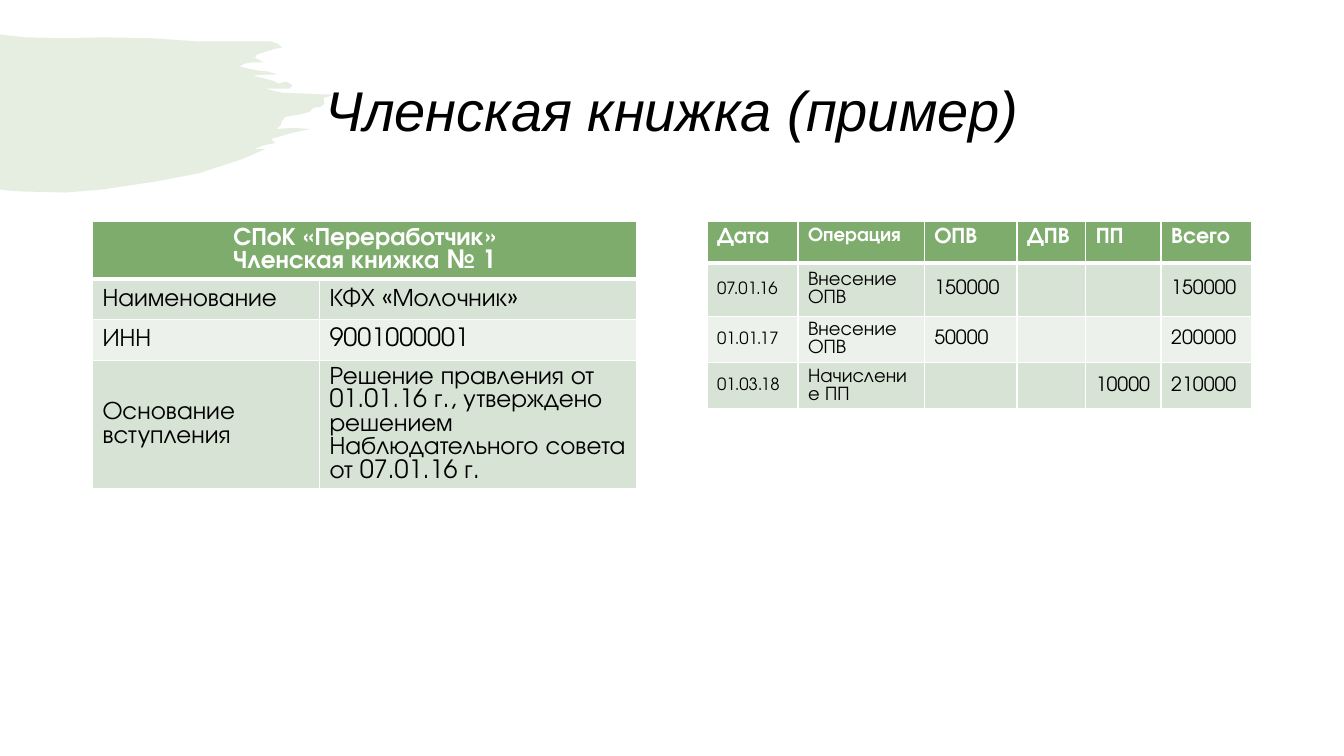
from lxml.etree import SubElement
from pptx import Presentation
from pptx.dml.color import RGBColor
from pptx.enum.text import MSO_ANCHOR as Anchor, PP_ALIGN as Align
from pptx.oxml.ns import qn
from pptx.util import Cm, Pt

GREEN = RGBColor(0x7D, 0xAC, 0x6C)
BAND_DARK = RGBColor(0xD7, 0xE3, 0xD4)
BAND_LIGHT = RGBColor(0xEC, 0xF1, 0xEB)
WHITE = RGBColor(0xFF, 0xFF, 0xFF)
BLACK = RGBColor(0, 0, 0)

BRUSH_UNIT = Cm(0.0254)
BRUSH_OUTLINE = [
    (0, 34), (6, 35), (25, 37), (66, 38), (102, 37), (151, 38), (194, 41), (248, 41),
    (268, 41), (275, 43), (280, 47), (271, 49), (255, 54), (253, 57), (256, 59), (262, 62),
    (250, 62), (243, 63), (238, 66), (246, 68), (256, 70), (266, 71), (275, 74), (263, 74),
    (251, 75), (263, 78), (273, 81), (276, 83), (280, 82), (284, 81), (288, 83), (290, 85),
    (287, 88), (284, 88), (263, 88), (280, 92), (330, 94), (326, 96), (321, 97), (322, 103),
    (318, 106), (311, 107), (307, 111), (300, 113), (283, 116), (280, 120), (278, 125),
    (274, 128), (291, 127), (308, 128), (289, 132), (269, 138), (273, 142), (262, 144),
    (252, 148), (263, 148), (240, 158), (197, 172), (155, 180), (102, 188), (65, 191),
    (23, 190), (7, 189), (0, 188),
]

MEMBER_ROWS = [
    ["СПоК «Переработчик»\nЧленская книжка № 1", ""],
    ["Наименование", "КФХ «Молочник»"],
    ["ИНН", "9001000001"],
    ["Основание вступления",
     "Решение правления от 01.01.16 г., утверждено решением "
     "Наблюдательного совета от 07.01.16 г."],
]
OPERATION_ROWS = [
    ["Дата", "Операция", "ОПВ", "ДПВ", "ПП", "Всего"],
    ["07.01.16", "Внесение ОПВ", "150000", "", "", "150000"],
    ["01.01.17", "Внесение ОПВ", "50000", "", "", "200000"],
    ["01.03.18", "Начисление ПП", "", "", "10000", "210000"],
]


class MemberBookSlide:
    """Draws the parts of the member book slide in one shared style."""

    title_font = "Arial"
    table_font = "TeX Gyre Adventor"

    def __init__(self, deck):
        self.slide = deck.slides.add_slide(deck.slide_layouts[5])

    def title(self, text, left, top, width, height):
        title = self.slide.shapes.title
        title.left, title.top, title.width, title.height = map(Cm, (left, top, width, height))
        frame = title.text_frame
        frame.text = text
        frame.vertical_anchor = Anchor.MIDDLE
        heading = frame.paragraphs[0]
        heading.alignment = Align.CENTER
        heading.line_spacing = 0.9
        self.style(heading, self.title_font, 40, BLACK, italic=True)

    def brush_stroke(self, outline, color, opacity):
        builder = self.slide.shapes.build_freeform(*outline[0], scale=BRUSH_UNIT)
        builder.add_line_segments(outline[1:], close=True)
        stroke = builder.convert_to_shape()
        stroke.shadow.inherit = False
        stroke.line.fill.background()
        stroke.fill.solid()
        stroke.fill.fore_color.rgb = color
        tint = next(stroke.element.spPr.iter(qn("a:srgbClr")))
        SubElement(tint, qn("a:alpha"), val=str(opacity * 1000))
        self.slide.shapes.element.insert(2, stroke.element)

    def table(self, rows, left, top, widths, heights, size_of):
        table = self.slide.shapes.add_table(
            len(rows), len(widths), Cm(left), Cm(top), Cm(sum(widths)), Cm(sum(heights))).table
        for column, width in zip(table.columns, widths):
            column.width = Cm(width)
        for r, (row, height) in enumerate(zip(rows, heights)):
            table.rows[r].height = Cm(height)
            for c, text in enumerate(row):
                self.cell(table.cell(r, c), text, r, size_of(r, c))
        return table

    def cell(self, cell, text, row, size):
        self.borders(cell, top=3 if row == 1 else 1, bottom=3 if row == 0 else 1)
        cell.fill.solid()
        cell.fill.fore_color.rgb = GREEN if row == 0 else BAND_DARK if row % 2 else BAND_LIGHT
        cell.vertical_anchor = Anchor.MIDDLE if row else Anchor.TOP
        cell.text_frame.text = text
        for paragraph in cell.text_frame.paragraphs:
            self.style(paragraph, self.table_font, size, BLACK if row else WHITE, bold=row == 0)

    def borders(self, cell, top, bottom):
        properties = cell._tc.get_or_add_tcPr()
        for side, width in zip("LRTB", (1, 1, top, bottom)):
            line = SubElement(properties, qn(f"a:ln{side}"), w=str(Pt(width)))
            fill = SubElement(line, qn("a:solidFill"))
            SubElement(fill, qn("a:srgbClr"), val=str(WHITE))

    def style(self, paragraph, font, size, color, bold=False, italic=False):
        for run in paragraph.runs:
            run.font.name = font
            run.font.size = Pt(size)
            run.font.color.rgb = color
            run.font.bold = bold
            run.font.italic = italic


def operation_size(row, column):
    """Gives the text size of a cell in the operations table."""
    if row == 0:
        return 14 if column == 1 else 16
    return 12 if column == 0 else 14


def main():
    """Builds the slide and saves it."""
    deck = Presentation()
    deck.slide_width, deck.slide_height = Cm(33.87), Cm(19.05)
    page = MemberBookSlide(deck)
    page.brush_stroke(BRUSH_OUTLINE, GREEN, 20)
    page.title("Членская книжка (пример)", 2.33, 1.01, 29.21, 3.68)

    member = page.table(MEMBER_ROWS, 2.33, 5.59, [5.72, 8], [1.03] * 4, lambda row, column: 18)
    member.cell(0, 0).merge(member.cell(0, 1))
    for paragraph in member.cell(0, 0).text_frame.paragraphs:
        paragraph.alignment = Align.CENTER

    page.table(OPERATION_ROWS, 17.82, 5.59, [2.29, 3.18, 2.34, 1.73, 1.9, 2.29],
               [1.03, 1.35, 1.03, 1.03], operation_size)
    deck.save("out.pptx")


if __name__ == "__main__":
    main()
